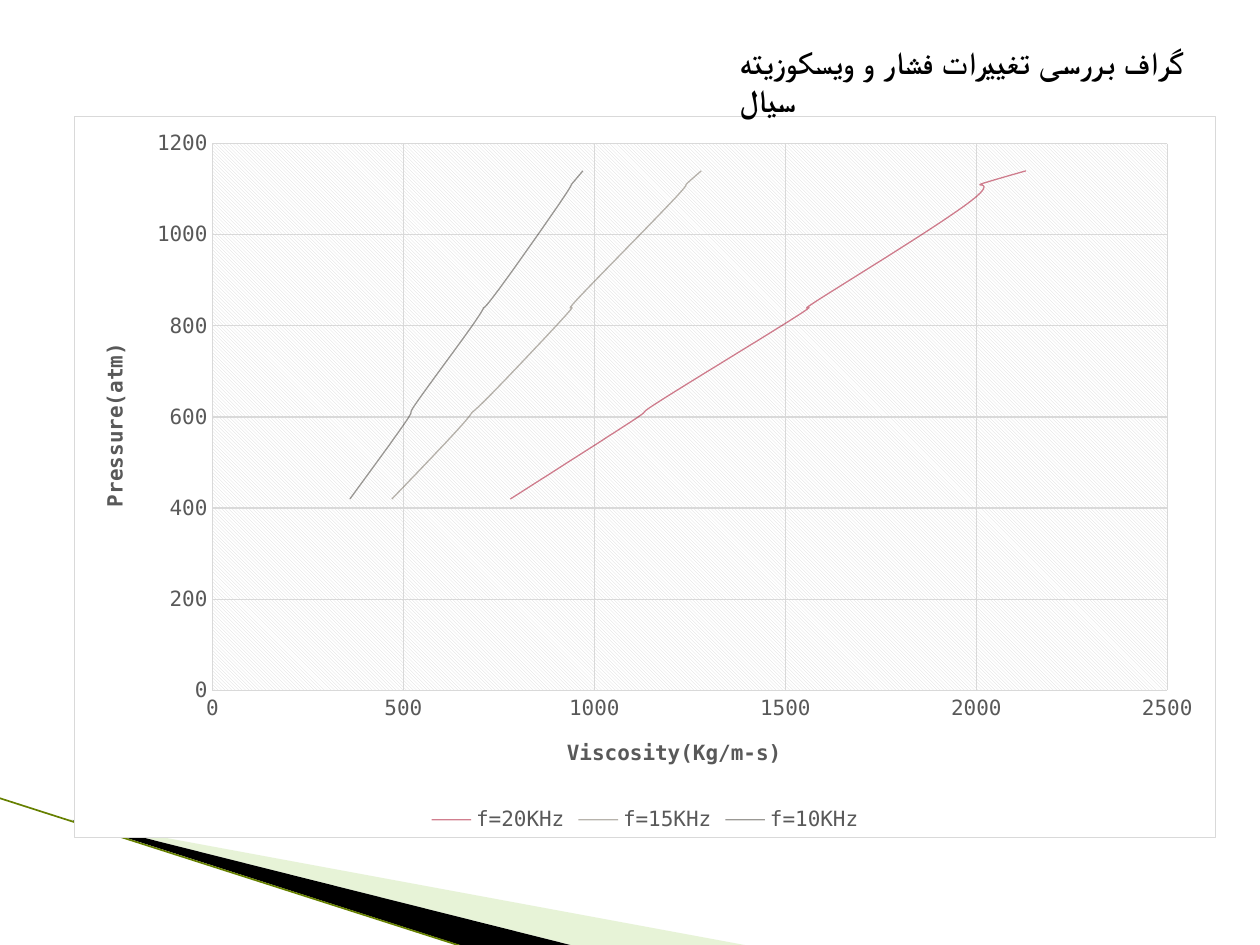
from itertools import zip_longest
from lxml import etree
from pptx import Presentation
from pptx import util as u
from pptx.chart.data import XyChartData
from pptx.dml.color import RGBColor
from pptx.enum import chart as ch, shapes, text
from pptx.oxml import parse_xml
from pptx.oxml.ns import nsdecls, qn

PX = 914400 / 126
FONT = "DejaVu Sans Mono"
BLACK = RGBColor(0x00, 0x00, 0x00)
WHITE = RGBColor(0xFF, 0xFF, 0xFF)
GREEN = RGBColor(0xC3, 0xE1, 0x9D)
OLIVE = RGBColor(0x66, 0x80, 0x00)
GREY = RGBColor(0x59, 0x59, 0x59)
RULE = RGBColor(0xD9, 0xD9, 0xD9)
RED = RGBColor(0xA5, 0x00, 0x21)
BROWN = RGBColor(0x71, 0x68, 0x5A)
DARK = RGBColor(0x39, 0x34, 0x2D)
LEFT, TOP, WIDTH, HEIGHT = 74, 116, 1142, 722


def fade(node, pct):
    for color in node.iter(qn("a:srgbClr")):
        etree.SubElement(color, qn("a:alpha")).set("val", str(pct * 1000))


def place(node, spot, **sides):
    old = node.find(qn("c:layout"))
    if old is not None:
        node.remove(old)
    lay = etree.Element(qn("c:layout"))
    man = etree.SubElement(lay, qn("c:manualLayout"))
    if "w" in sides:
        etree.SubElement(man, qn("c:layoutTarget")).set("val", "inner")
    for key in ("xMode", "yMode"):
        etree.SubElement(man, qn("c:" + key)).set("val", "edge")
    for key, val in sides.items():
        full = WIDTH if key in "xw" else HEIGHT
        etree.SubElement(man, qn("c:" + key)).set("val", str(round(val / full, 4)))
    node.insert(spot, lay)


prs = Presentation()
prs.slide_width = round(1260 * PX)
prs.slide_height = round(945 * PX)
slide = prs.slides.add_slide(prs.slide_layouts[5])

wedges = [
    (GREEN, 40, [(69, 820), (750, 946), (575, 946), (69, 819)]),
    (BLACK, 100, [(73, 820), (574, 946), (469, 948), (74, 821)]),
]
for color, alpha, points in wedges:
    pen = slide.shapes.build_freeform(*points[0], scale=PX)
    pen.add_line_segments(points[1:], close=True)
    wedge = pen.convert_to_shape()
    wedge.shadow.inherit = False
    wedge.fill.solid()
    wedge.fill.fore_color.rgb = color
    wedge.line.fill.background()
    if alpha < 100:
        fade(wedge.element.spPr, alpha)

ends = [round(v * PX) for v in (-1, 798, 467, 948)]
edge = slide.shapes.add_connector(shapes.MSO_CONNECTOR.STRAIGHT, *ends)
edge.line.color.rgb = OLIVE
edge.line.width = u.Pt(0.95)
etree.SubElement(edge.element.spPr, qn("a:effectLst"))

press = [1140, 1110, 1070, 880, 840, 800, 650, 610, 570, 420, 390,
         370, 360, 290, 270, 250, 190, 150, 140, 130, 100]
curves = [
    ("f=20KHz", RED, [2130, 2010, 1980, 1630, 1560, 1490, 1200, 1130, 1060, 780]),
    ("f=15KHz", BROWN, [1280, 1240, 1200, 980, 940, 900, 730, 680, 640, 470]),
    ("f=10KHz", DARK, [970, 940, 910, 750, 710, 680, 550, 520, 490, 360]),
]
data = XyChartData()
for name, color, visc in curves:
    row = data.add_series(name)
    for x, y in zip_longest(visc, press):
        row.add_data_point(x, y)
box = [round(v * PX) for v in (LEFT, TOP, WIDTH, HEIGHT)]
chart = slide.shapes.add_chart(
    ch.XL_CHART_TYPE.XY_SCATTER_SMOOTH_NO_MARKERS, *box, data).chart
chart.has_title = False
chart.font.name = FONT
chart.font.size = u.Pt(12)
chart.font.color.rgb = GREY
chart.has_legend = True
chart.legend.position = ch.XL_LEGEND_POSITION.BOTTOM
chart.legend.include_in_layout = False
plot = chart.plots[0]
plot.vary_by_categories = False
for row, (name, color, visc) in zip(plot.series, curves):
    row.format.line.color.rgb = color
    row.format.line.width = u.Pt(0.75)
    row.marker.style = ch.XL_MARKER_STYLE.NONE
    fade(row.format.line.color._xFill, 50)

axes = [
    (chart.category_axis, "Viscosity(Kg/m-s)", 2500, 500),
    (chart.value_axis, "Pressure(atm)", 1200, 200),
]
for axis, label, top, step in axes:
    axis.minimum_scale = 0
    axis.maximum_scale = top
    axis.major_unit = step
    axis.major_tick_mark = axis.minor_tick_mark = ch.XL_TICK_MARK.NONE
    axis.has_major_gridlines = True
    for line in (axis.format.line, axis.major_gridlines.format.line):
        line.color.rgb = RULE
        line.width = u.Pt(0.75)
    axis.tick_labels.number_format = "General"
    axis.tick_labels.number_format_is_linked = False
    frame = axis.axis_title.text_frame
    frame.text = label
    font = frame.paragraphs[0].runs[0].font
    font.name = FONT
    font.size = u.Pt(12)
    font.bold = True
    font.color.rgb = GREY

root = chart.element
for node in root.iter(qn("c:smooth")):
    node.set("val", "1")
for node in root.iter(qn("c:xVal")):
    for point in list(node.iter(qn("c:pt"))):
        if point.findtext(qn("c:v")) in ("None", "", None):
            point.getparent().remove(point)
below, beside = list(root.iter(qn("c:title")))
place(below, 1, x=563 - LEFT, y=735 - TOP)
place(beside, 1, x=96 - LEFT, y=339 - TOP)
turn = next(beside.iter(qn("a:bodyPr")))
turn.set("rot", "-5400000")
turn.set("vert", "horz")
area = next(root.iter(qn("c:plotArea")))
place(area, 0, x=212 - LEFT, y=143 - TOP, w=956, h=548)
area.append(parse_xml(
    f'<c:spPr {nsdecls("c", "a")}><a:pattFill prst="ltDnDiag">'
    f'<a:fgClr><a:srgbClr val="{RULE}"/></a:fgClr>'
    f'<a:bgClr><a:srgbClr val="{WHITE}"/></a:bgClr></a:pattFill></c:spPr>'))
root.find(qn("c:chart")).addnext(parse_xml(
    f'<c:spPr {nsdecls("c", "a")}><a:solidFill><a:srgbClr val="{WHITE}"/></a:solidFill>'
    f'<a:ln w="9525"><a:solidFill><a:srgbClr val="{RULE}"/></a:solidFill></a:ln></c:spPr>'))

title = slide.shapes.title
title.left, title.top, title.width, title.height = [
    round(v * PX) for v in (727, 37, 528, 50)]
frame = title.text_frame
frame.text = "گراف بررسی تغییرات فشار و ویسکوزیته سیال"
frame.word_wrap = True
frame.auto_size = text.MSO_AUTO_SIZE.NONE
frame.vertical_anchor = text.MSO_ANCHOR.TOP
para = frame.paragraphs[0]
para.alignment = text.PP_ALIGN.LEFT
font = para.runs[0].font
font.name = FONT
font.size = u.Pt(18)
font.bold = True
font.color.rgb = BLACK
title.element.getparent().append(title.element)

prs.save("out.pptx")
